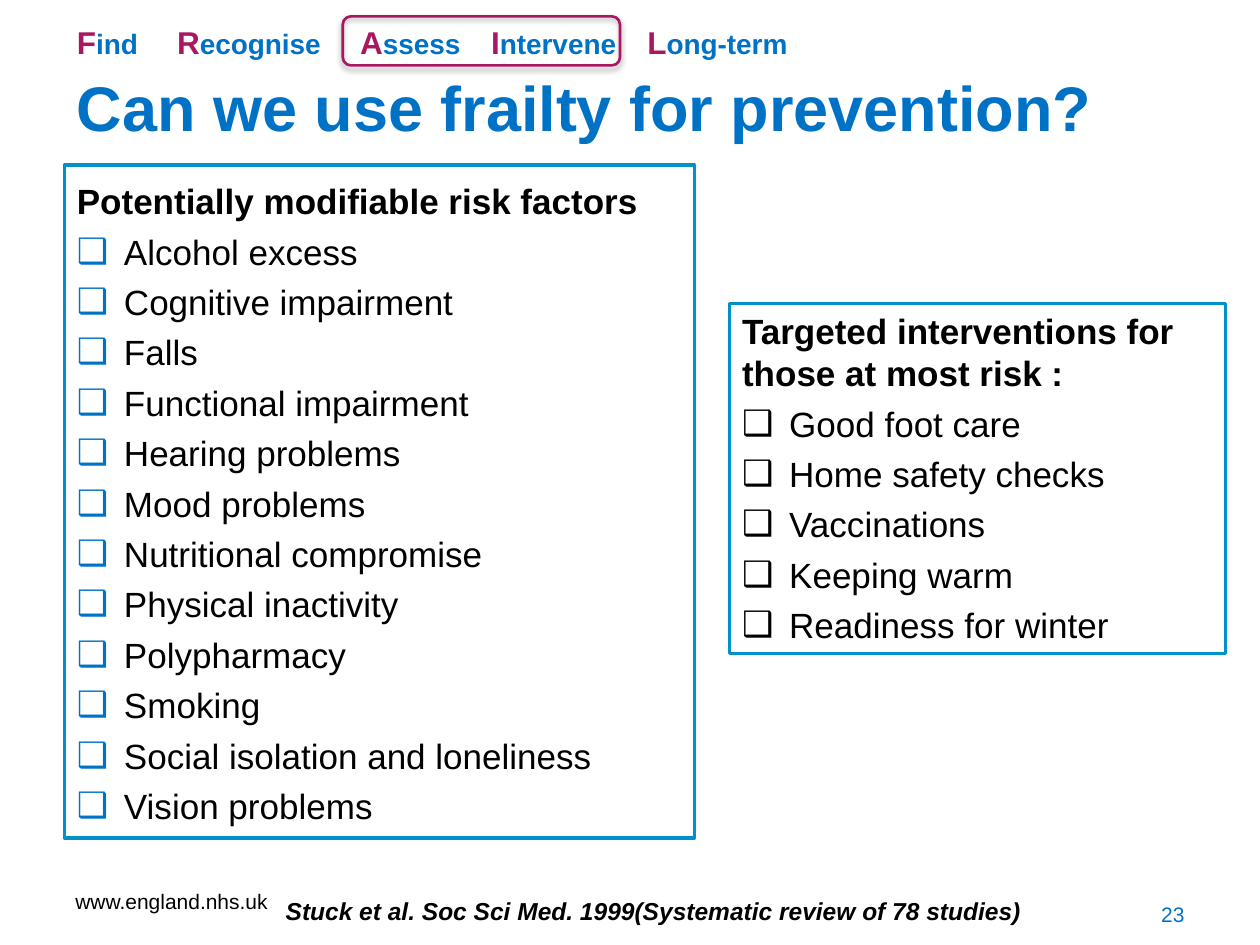
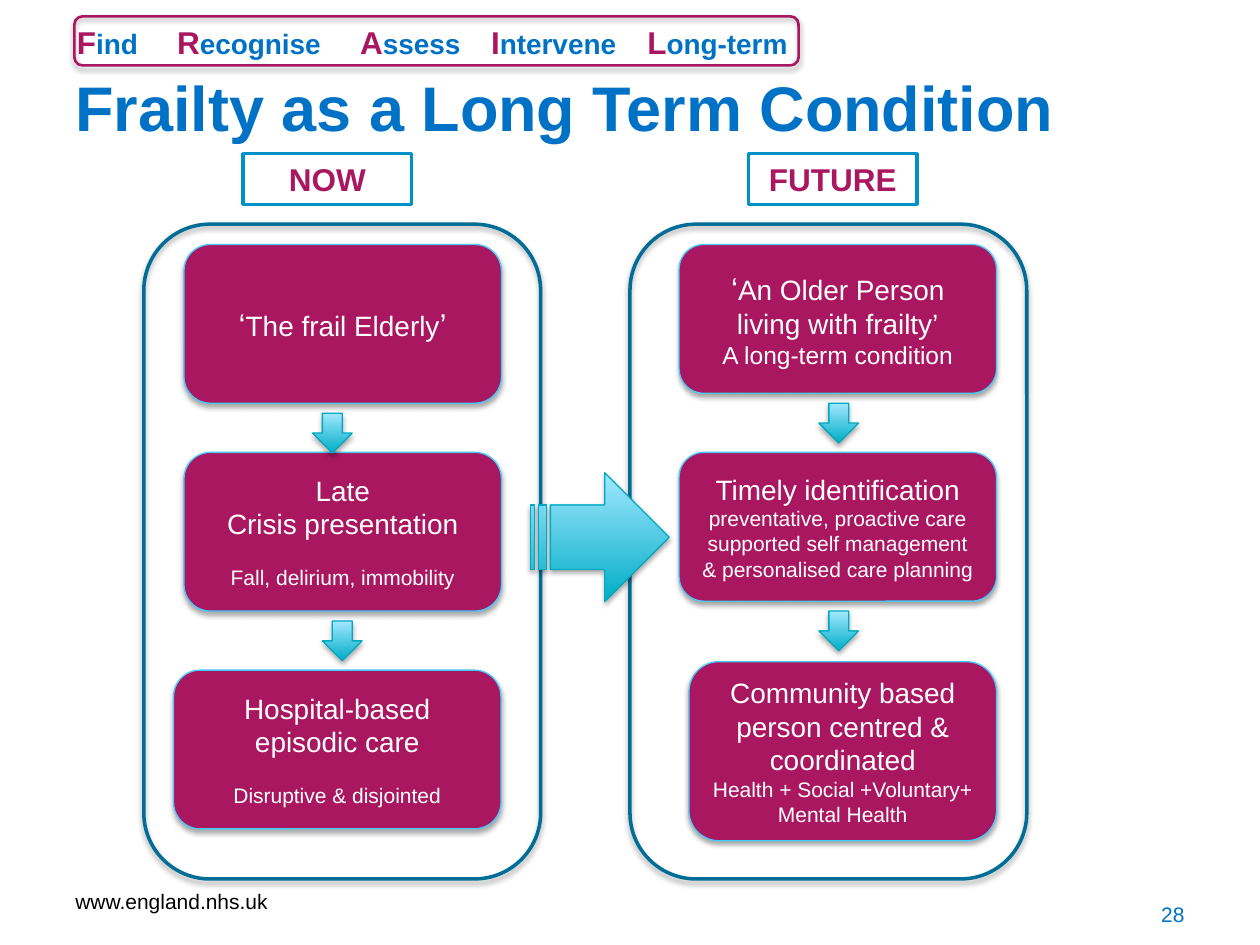
import pptx
import pptx.util
import pptx.dml.color
import pptx.enum.shapes
import pptx.enum.text
from lxml import etree

Cm, Pt = pptx.util.Cm, pptx.util.Pt
SHAPE = pptx.enum.shapes.MSO_SHAPE
ALIGN = pptx.enum.text.PP_ALIGN
ANCHOR = pptx.enum.text.MSO_ANCHOR
NAMESPACE = "http://schemas.openxmlformats.org/drawingml/2006/main"

# Shared style
FONT = "Arial"
COLORS = {
    "blue": "0072C6", "plum": "AA1761", "black": "000000", "white": "FFFFFF",
    "box_edge": "0091C9", "frame_edge": "006D97", "card_edge": "46CBFF",
    "arrow_dark": "00ADC6", "arrow_light": "A2E8FF", "arrow_edge": "00A9C2",
}
WEBSITE = "www.england.nhs.uk"
STEPS = ["Find", "Recognise", "Assess", "Intervene", "Long-term"]
STEP_TABS = [2.02, 5.71, 8.35, 11.5]

# Content of the prevention slide; places are left, top, width, height in cm
PREVENTION = {
    "title": "Can we use frailty for prevention?", "title_left": 1.3,
    "number": "23", "ring": (6.91, 0.33, 5.59, 0.99),
}
CHECKLISTS = [
    {"place": (1.3, 3.33, 12.7, 13.56), "bullet": "blue", "heading_spacing": 1.2,
     "heading": "Potentially modifiable risk factors",
     "items": ["Alcohol excess", "Cognitive impairment", "Falls",
               "Functional impairment", "Hearing problems", "Mood problems",
               "Nutritional compromise", "Physical inactivity", "Polypharmacy",
               "Smoking", "Social isolation and loneliness", "Vision problems"]},
    {"place": (14.71, 6.12, 10, 7.06), "bullet": "black", "heading_spacing": 1,
     "heading": "Targeted interventions for those at most risk :",
     "items": ["Good foot care", "Home safety checks", "Vaccinations",
               "Keeping warm", "Readiness for winter"]},
]
CITATION = "Stuck et al. Soc Sci Med. 1999(Systematic review of 78 studies)"

# Content of the long-term slide; card lines are spans, size, space before
LONG_TERM = {
    "title": "Frailty as a Long Term Condition", "title_left": 1.27,
    "number": "28", "ring": (1.5, 0.33, 14.6, 0.99),
}
COLUMNS = [
    {"label": "NOW", "label_left": 4.9, "frame_left": 2.9,
     "arrows": [(6.3, 8.33), (6.5, 12.52)],
     "cards": [
         ((3.71, 4.93, 6.4, 3.2),
          [([("‘", {"size": 18}), ("The frail Elderly", {}), ("’", {"size": 18})], 16, 0)]),
         ((3.71, 9.12, 6.4, 3.2),
          [("Late", 16, 0), ("Crisis presentation", 16, 0),
           ("Fall, delirium, immobility", 12, 14)]),
         ((3.5, 13.51, 6.6, 3.2),
          [("Hospital-based episodic care", 16, 0),
           ("Disruptive & disjointed", 12, 14)])]},
    {"label": "FUTURE", "label_left": 15.09, "frame_left": 12.7,
     "arrows": [(16.51, 8.13), (16.51, 12.32)],
     "cards": [
         ((13.69, 4.93, 6.4, 3),
          [([("‘", {"size": 18}), ("An Older Person living with frailty’", {})], 16, 0),
           ("A long-term condition", 14, 0)]),
         ((13.69, 9.12, 6.4, 3),
          [("Timely identification", 16, 0), ("preventative, proactive care", 12, 0),
           ("supported self management & personalised care planning", 12, 0)]),
         ((13.89, 13.34, 6.2, 3.61),
          [("Community based person centred & coordinated", 16, 0),
           ("Health + Social +Voluntary+ Mental Health", 12, 0)])]},
]
ARROW_SIZE = 0.8
CHANGE_ARROW = (10.69, 9.53, 2.8, 2.6)


def rgb(name):
    return pptx.dml.color.RGBColor.from_string(COLORS[name])


def add_node(parent, tag, **attributes):
    return etree.SubElement(parent, f"{{{NAMESPACE}}}{tag}", attributes)


def add_bullet(para, color):
    properties = para._p.get_or_add_pPr()
    properties.set("marL", str(Cm(0.95)))
    properties.set("indent", str(-Cm(0.95)))
    add_node(add_node(properties, "buClr"), "srgbClr", val=COLORS[color])
    add_node(properties, "buFont", typeface=FONT)
    add_node(properties, "buChar", char="❑")


def add_tabs(para, stops):
    tabs = add_node(para._p.get_or_add_pPr(), "tabLst")
    for stop in stops:
        add_node(tabs, "tab", pos=str(Cm(stop)), algn="l")


def add_text(box, text, size=16, color="black", bold=False, italic=False,
             align=ALIGN.LEFT, spacing=None, before=0, bullet=None, tabs=()):
    """Add one paragraph; text is a string or a list of (text, changes)."""
    frame = box.text_frame
    para = frame.paragraphs[0] if not frame.text else frame.add_paragraph()
    if bullet:
        add_bullet(para, bullet)
    if tabs:
        add_tabs(para, tabs)
    para.alignment = align
    if spacing:
        para.line_spacing = float(spacing)
    if before:
        para.space_before = Pt(before)
    for words, changes in [(text, {})] if isinstance(text, str) else text:
        span = para.add_run()
        span.text = words
        span.font.name = FONT
        span.font.size = Pt(changes.get("size", size))
        span.font.bold, span.font.italic = bold, italic
        span.font.color.rgb = rgb(changes.get("color", color))


def add_box(page, place, anchor=ANCHOR.TOP):
    box = page.shapes.add_textbox(*map(Cm, place))
    box.text_frame.word_wrap = True
    box.text_frame.vertical_anchor = anchor
    return box


def add_shape(page, kind, place, edge, width, fill=None, shadow=True,
              anchor=ANCHOR.MIDDLE):
    shape = page.shapes.add_shape(kind, *map(Cm, place))
    if fill == "gradient":
        shape.fill.gradient()
        shape.fill.gradient_angle = 90
        for stop, name in zip(shape.fill.gradient_stops, ("arrow_dark", "arrow_light")):
            stop.color.rgb = rgb(name)
    elif fill:
        shape.fill.solid()
        shape.fill.fore_color.rgb = rgb(fill)
    else:
        shape.fill.background()
    shape.line.color.rgb = rgb(edge)
    shape.line.width = Pt(width)
    shape.shadow.inherit = False
    if shadow:
        effects = shape._element.spPr.find(f"{{{NAMESPACE}}}effectLst")
        outer = add_node(effects, "outerShdw", blurRad=str(Pt(3.1)), dist=str(Pt(1.8)),
                         dir="5400000", rotWithShape="0")
        add_node(add_node(outer, "srgbClr", val=COLORS["black"]), "alpha", val="35000")
    shape.text_frame.word_wrap = True
    shape.text_frame.vertical_anchor = anchor
    return shape


def add_arrow(page, kind, place):
    add_shape(page, kind, place, "arrow_edge", 0.75, "gradient")


def add_page(deck, content):
    """Start a slide with its footer, step strip, title, ring and number."""
    page = deck.slides.add_slide(deck.slide_layouts[6])
    add_text(add_box(page, (1.27, 17.65, 5.92, 1.02), ANCHOR.MIDDLE), WEBSITE, size=12)
    spans = []
    for index, step in enumerate(STEPS):
        if index:
            spans.append(("\t", {}))
        spans += [(step[0], {"size": 18, "color": "plum"}), (step[1:], {})]
    add_text(add_box(page, (1.3, 0.33, 15, 1.02)), spans, color="blue", bold=True,
             tabs=STEP_TABS)
    title = add_box(page, (content["title_left"], 0.56, 22.86, 3.18), ANCHOR.MIDDLE)
    add_text(title, content["title"], size=36, color="blue", bold=True)
    add_shape(page, SHAPE.ROUNDED_RECTANGLE, content["ring"], "plum", 1.5)
    number = add_box(page, (18.21, 17.91, 5.92, 1.02), ANCHOR.MIDDLE)
    add_text(number, content["number"], size=12, color="blue", align=ALIGN.RIGHT)
    return page


def build_prevention(deck):
    page = add_page(deck, PREVENTION)
    for checklist in CHECKLISTS:
        box = add_shape(page, SHAPE.RECTANGLE, checklist["place"], "box_edge", 2,
                        "white", shadow=False, anchor=ANCHOR.TOP)
        add_text(box, checklist["heading"], size=20, bold=True,
                 spacing=checklist["heading_spacing"])
        for item in checklist["items"]:
            add_text(box, item, size=20, spacing=1.2, bullet=checklist["bullet"])
    add_text(add_box(page, (5.51, 17.93, 15.9, 0.86)), CITATION, size=14,
             bold=True, italic=True)


def build_long_term(deck):
    page = add_page(deck, LONG_TERM)
    for column in COLUMNS:
        # Cards and the small arrows between them
        for place, lines in column["cards"]:
            card = add_shape(page, SHAPE.ROUNDED_RECTANGLE, place, "card_edge", 0.75, "plum")
            for text, size, before in lines:
                add_text(card, text, size=size, before=before, color="white",
                         align=ALIGN.CENTER)
        for left, top in column["arrows"]:
            add_arrow(page, SHAPE.DOWN_ARROW, (left, top, ARROW_SIZE, ARROW_SIZE))
        # Frame around the column and its label
        add_shape(page, SHAPE.ROUNDED_RECTANGLE, (column["frame_left"], 4.52, 8, 13.2),
                  "frame_edge", 2)
        label = add_shape(page, SHAPE.RECTANGLE, (column["label_left"], 3.1, 3.4, 1.02),
                          "box_edge", 2, "white", shadow=False, anchor=ANCHOR.TOP)
        add_text(label, column["label"], size=18, color="plum", bold=True,
                 align=ALIGN.CENTER)
    add_arrow(page, SHAPE.STRIPED_RIGHT_ARROW, CHANGE_ARROW)


def main():
    deck = pptx.Presentation()
    deck.slide_width, deck.slide_height = Cm(25.4), Cm(19.05)
    build_prevention(deck)
    build_long_term(deck)
    deck.save("out.pptx")


if __name__ == "__main__":
    main()
